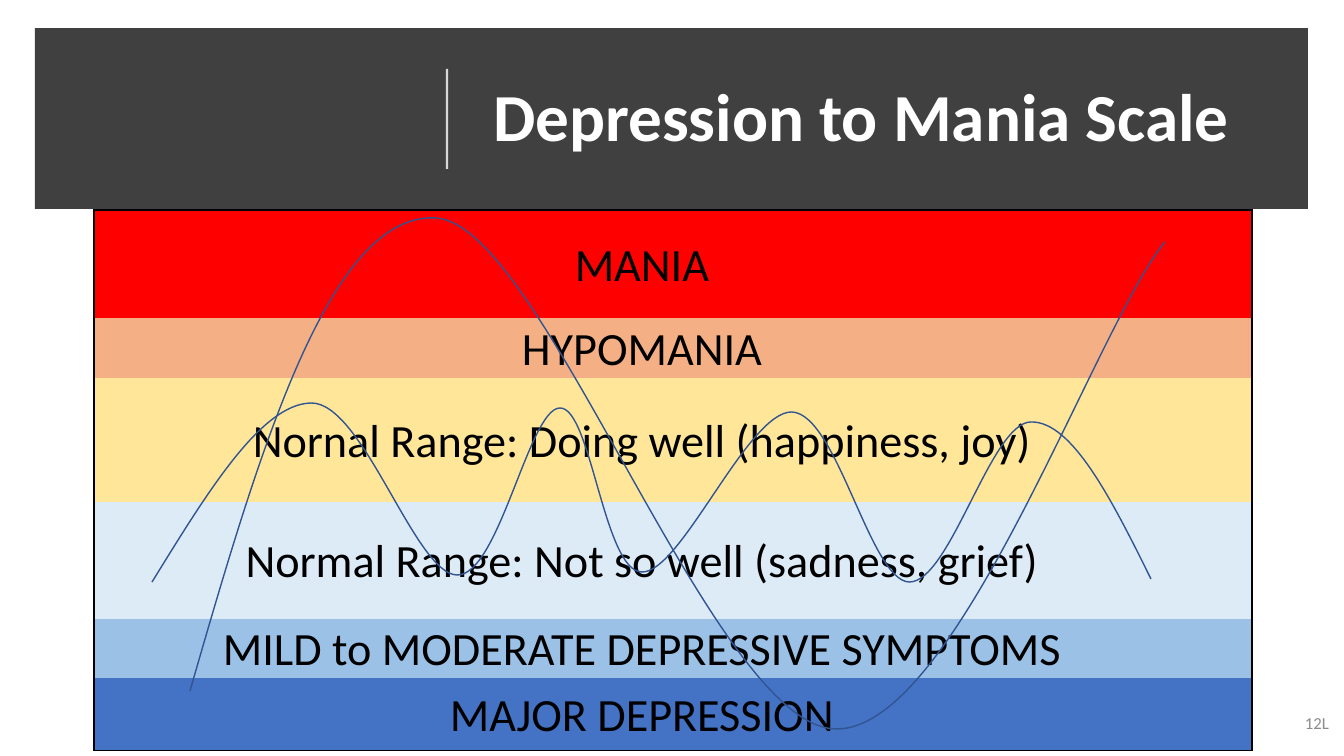
from lxml import etree
from pptx import Presentation
from pptx.dml.color import RGBColor
from pptx.enum import shapes, text
from pptx.oxml import ns
from pptx.util import Emu, Pt

PX = 914400 / 100.8
THEME = {
    "font": "Calibri",
    "banner": "404040", "light": "FFFFFF", "ink": "000000",
    "curve": "325491", "number": "8C8C8C",
    "title_size": 48, "band_size": 33, "number_size": 12,
}


def px(*lengths):
    return [Emu(round(length * PX)) for length in lengths]


def write(frame, words, size, color, align, bold=False):
    frame.word_wrap = True
    paragraph = frame.paragraphs[0]
    paragraph.alignment = align
    run = paragraph.add_run()
    run.text = words
    formats = {"name": THEME["font"], "size": Pt(THEME[size]), "bold": bold}
    for name, value in formats.items():
        setattr(run.font, name, value)
    run.font.color.rgb = RGBColor.from_string(THEME[color])
    return paragraph


presentation = Presentation()
presentation.slide_width, presentation.slide_height = px(1344, 756)
slide = presentation.slides.add_slide(presentation.slide_layouts[5])

# Banner, placed behind the title
banner = slide.shapes.add_shape(shapes.MSO_SHAPE.RECTANGLE, *px(35, 28, 1273, 181))
banner.shadow.inherit = False
banner.fill.solid()
banner.fill.fore_color.rgb = RGBColor.from_string(THEME["banner"])
banner.line.fill.background()
title = slide.shapes.title
title.element.addprevious(banner.element)

# Title
title.left, title.top, title.width, title.height = px(483, 50, 769, 139)
title.text_frame.vertical_anchor = text.MSO_ANCHOR.MIDDLE
paragraph = write(title.text_frame, "Depression to Mania Scale", "title_size", "light",
                  text.PP_ALIGN.LEFT, bold=True)
paragraph.line_spacing = 0.9

# Divider, slightly transparent
divider = slide.shapes.add_connector(shapes.MSO_CONNECTOR.STRAIGHT, *px(447, 169, 447, 69))
divider.line.width = Pt(1.5)
divider.line.color.rgb = RGBColor.from_string(THEME["light"])
properties = divider.element.spPr
color = properties.find(".//" + ns.qn("a:srgbClr"))
etree.SubElement(color, ns.qn("a:alpha"), val="80000")
etree.SubElement(properties, ns.qn("a:effectLst"))

# Mood bands: label, row height, colour
BANDS = [
    ("MANIA", 108, "FF0000"),
    ("HYPOMANIA", 60, "F4B084"),
    ("Nornal Range: Doing well (happiness, joy)", 124, "FFE699"),
    ("Normal Range: Not so well (sadness, grief)", 117, "DDEBF7"),
    ("MILD to MODERATE DEPRESSIVE SYMPTOMS", 59, "9BC2E6"),
    ("MAJOR DEPRESSION", 72, "4472C4"),
]
COLUMNS = [1096, 62]
height = sum(band[1] for band in BANDS)
table = slide.shapes.add_table(len(BANDS), len(COLUMNS),
                               *px(94, 210, sum(COLUMNS), height)).table
table.first_row = table.horz_banding = False
for column, width in zip(table.columns, COLUMNS):
    column.width = px(width)[0]

for row, (label, row_height, fill) in enumerate(BANDS):
    table.rows[row].height = px(row_height)[0]
    for column in range(len(COLUMNS)):
        cell = table.cell(row, column)
        margins = dict(zip(("margin_left", "margin_right", "margin_top", "margin_bottom"),
                           px(3, 3, 3, 0)))
        for name, value in margins.items():
            setattr(cell, name, value)
        cell.vertical_anchor = text.MSO_ANCHOR.MIDDLE
        cell.fill.solid()
        cell.fill.fore_color.rgb = RGBColor.from_string(fill)
        if column == 0:
            write(cell.text_frame, label, "band_size", "ink", text.PP_ALIGN.CENTER)

        # Only the outer edge of the table is ruled
        edges = {"L": column == 0, "R": column == len(COLUMNS) - 1,
                 "T": row == 0, "B": row == len(BANDS) - 1}
        cell_properties = cell._tc.get_or_add_tcPr()
        for position, (side, ruled) in enumerate(edges.items()):
            border = etree.Element(ns.qn("a:ln" + side), w=str(Pt(1)))
            if ruled:
                solid = etree.SubElement(border, ns.qn("a:solidFill"))
                etree.SubElement(solid, ns.qn("a:srgbClr"), val=THEME["ink"])
            else:
                etree.SubElement(border, ns.qn("a:noFill"))
            cell_properties.insert(position, border)

# Mood curves: a start, then two control points and an end for each Bézier arc
CURVES = [
    [(190, 691), (259, 452), (329, 212), (436, 218),
     (543, 224), (713, 725), (835, 729),
     (956, 733), (1095, 327), (1165, 242)],
    [(152, 582), (207, 493), (261, 404), (311, 403),
     (363, 402), (415, 574), (457, 575),
     (499, 576), (529, 408), (560, 408),
     (591, 407), (604, 572), (642, 572),
     (681, 573), (748, 411), (792, 412),
     (837, 414), (870, 580), (909, 582),
     (950, 583), (991, 422), (1031, 422),
     (1072, 421), (1112, 500), (1151, 579)],
]
for points in CURVES:
    vertices = [px(*point) for point in points]
    builder = slide.shapes.build_freeform(*vertices[0])
    builder.add_line_segments(vertices[3::3], close=False)
    curve = builder.convert_to_shape()

    # Bend each straight segment into its arc
    segments = list(curve.element.iter(ns.qn("a:lnTo")))
    for index, segment in enumerate(segments):
        arc = etree.Element(ns.qn("a:cubicBezTo"))
        for x, y in vertices[3 * index + 1:3 * index + 4]:
            etree.SubElement(arc, ns.qn("a:pt"), x=str(x - curve.left), y=str(y - curve.top))
        segment.getparent().replace(segment, arc)

    curve.shadow.inherit = False
    curve.fill.background()
    curve.line.width = Pt(1)
    curve.line.color.rgb = RGBColor.from_string(THEME["curve"])

# Slide number
number = slide.shapes.add_textbox(*px(1037, 703, 302, 40))
number.text_frame.vertical_anchor = text.MSO_ANCHOR.MIDDLE
write(number.text_frame, "12L", "number_size", "number", text.PP_ALIGN.RIGHT)

presentation.save("out.pptx")
